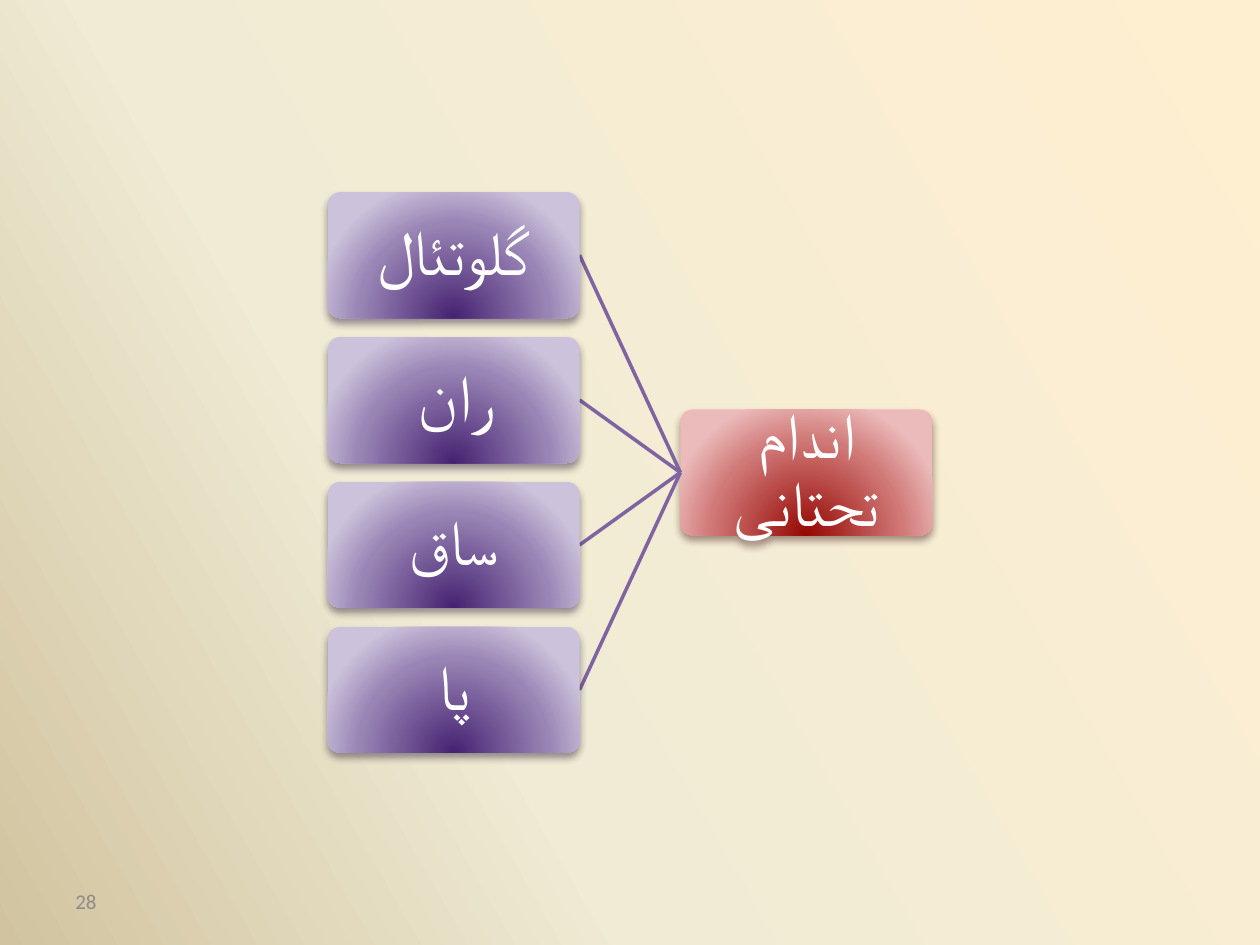
import lxml.etree
import pptx
import pptx.dml.color
import pptx.enum.shapes
import pptx.enum.text
import pptx.oxml.ns
import pptx.util
from pptx.dml.color import RGBColor
from pptx.util import Inches

WHITE = RGBColor(0xFF, 0xFF, 0xFF)
GRAY = RGBColor(0x8C, 0x8C, 0x8C)
LINE_PURPLE = RGBColor(0x80, 0x64, 0xA2)
RED_SHADOW = RGBColor(0x44, 0x1B, 0x1A)
PURPLE_SHADOW = RGBColor(0x2D, 0x23, 0x39)
BACKGROUND_STOPS = [(0, RGBColor(0xFF, 0xEF, 0xD1)), (65, RGBColor(0xF0, 0xEB, 0xD5)),
                    (100, RGBColor(0xD1, 0xC3, 0x9F))]
RED_STOPS = [(0, RGBColor(0x96, 0x07, 0x03)), (68, RGBColor(0xD0, 0x79, 0x77)),
             (100, RGBColor(0xEB, 0xBA, 0xBA))]
PURPLE_STOPS = [(0, RGBColor(0x46, 0x22, 0x72)), (68, RGBColor(0x9A, 0x86, 0xB6)),
                (100, RGBColor(0xCC, 0xC2, 0xDB))]
NAMESPACE = pptx.oxml.ns.nsdecls("a")
LINEAR = f'<a:lin {NAMESPACE} ang="9000000" scaled="0"/>'
RADIAL = (f'<a:path {NAMESPACE} path="circle">'
          '<a:fillToRect l="50000" t="130000" r="50000" b="-30000"/></a:path>')


def set_gradient(fill, element, stops, direction):
    fill.gradient()
    gradient = element.find(".//" + pptx.oxml.ns.qn("a:gradFill"))
    for child in list(gradient):
        gradient.remove(child)
    stop_list = lxml.etree.SubElement(gradient, pptx.oxml.ns.qn("a:gsLst"))
    for position, color in stops:
        stop = lxml.etree.SubElement(stop_list, pptx.oxml.ns.qn("a:gs"), pos=str(position * 1000))
        lxml.etree.SubElement(stop, pptx.oxml.ns.qn("a:srgbClr"), val=str(color))
    gradient.append(pptx.oxml.parse_xml(direction))


def add_box(slide, text, left, top, stops, shadow_color):
    shape = slide.shapes.add_shape(pptx.enum.shapes.MSO_SHAPE.ROUNDED_RECTANGLE,
                                   Inches(left), Inches(top), Inches(BOX_WIDTH), Inches(BOX_HEIGHT))
    shape.adjustments[0] = 0.1
    set_gradient(shape.fill, shape._element.spPr, stops, RADIAL)
    shape.line.fill.background()
    shape._element.spPr.append(pptx.oxml.parse_xml(
        f'<a:effectLst {NAMESPACE}><a:outerShdw blurRad="57150" dist="38100" dir="5400000" '
        f'algn="ctr" rotWithShape="0"><a:srgbClr val="{shadow_color}"><a:alpha val="48000"/>'
        '</a:srgbClr></a:outerShdw></a:effectLst>'))
    frame = shape.text_frame
    frame.text = text
    frame.word_wrap = True
    frame.vertical_anchor = pptx.enum.text.MSO_ANCHOR.MIDDLE
    frame.margin_left = frame.margin_right = Inches(0.06)
    frame.margin_top = frame.margin_bottom = Inches(0.06)
    paragraph = frame.paragraphs[0]
    paragraph.alignment = pptx.enum.text.PP_ALIGN.CENTER
    paragraph.line_spacing = 0.9
    paragraph._p.get_or_add_pPr().set("rtl", "1")
    font = paragraph.runs[0].font
    font.size = pptx.util.Pt(36)
    font.name = "Calibri"
    font.color.rgb = WHITE
    lxml.etree.SubElement(font._element, pptx.oxml.ns.qn("a:cs"), typeface="Calibri")


presentation = pptx.Presentation()
presentation.slide_width = Inches(10)
presentation.slide_height = Inches(7.5)
slide = presentation.slides.add_slide(presentation.slide_layouts[6])
set_gradient(slide.background.fill, slide._element, BACKGROUND_STOPS, LINEAR)

BOX_WIDTH, BOX_HEIGHT = 2, 1
ROOT_LEFT, ROOT_TOP = 5.4, 3.25
BRANCH_LEFT, BRANCH_TOP, BRANCH_PITCH = 2.6, 1.525, 1.15

add_box(slide, "اندام تحتانی", ROOT_LEFT, ROOT_TOP, RED_STOPS, RED_SHADOW)
for index, label in enumerate(["گلوتئال", "ران", "ساق", "پا"]):
    top = BRANCH_TOP + index * BRANCH_PITCH
    connector = slide.shapes.add_connector(
        pptx.enum.shapes.MSO_CONNECTOR.STRAIGHT,
        Inches(ROOT_LEFT), Inches(ROOT_TOP + BOX_HEIGHT / 2),
        Inches(BRANCH_LEFT + BOX_WIDTH), Inches(top + BOX_HEIGHT / 2))
    connector.line.color.rgb = LINE_PURPLE
    connector.line.width = pptx.util.Pt(2)
    lxml.etree.SubElement(connector._element.spPr, pptx.oxml.ns.qn("a:effectLst"))
    add_box(slide, label, BRANCH_LEFT, top, PURPLE_STOPS, PURPLE_SHADOW)

page_number = slide.shapes.add_textbox(Inches(0.5), Inches(6.95), Inches(2.33), Inches(0.4))
page_number.text_frame.text = "28"
page_number.text_frame.word_wrap = True
page_number.text_frame.vertical_anchor = pptx.enum.text.MSO_ANCHOR.MIDDLE
paragraph = page_number.text_frame.paragraphs[0]
paragraph.alignment = pptx.enum.text.PP_ALIGN.LEFT
paragraph.runs[0].font.size = pptx.util.Pt(12)
paragraph.runs[0].font.name = "Calibri"
paragraph.runs[0].font.color.rgb = GRAY

presentation.save("out.pptx")
